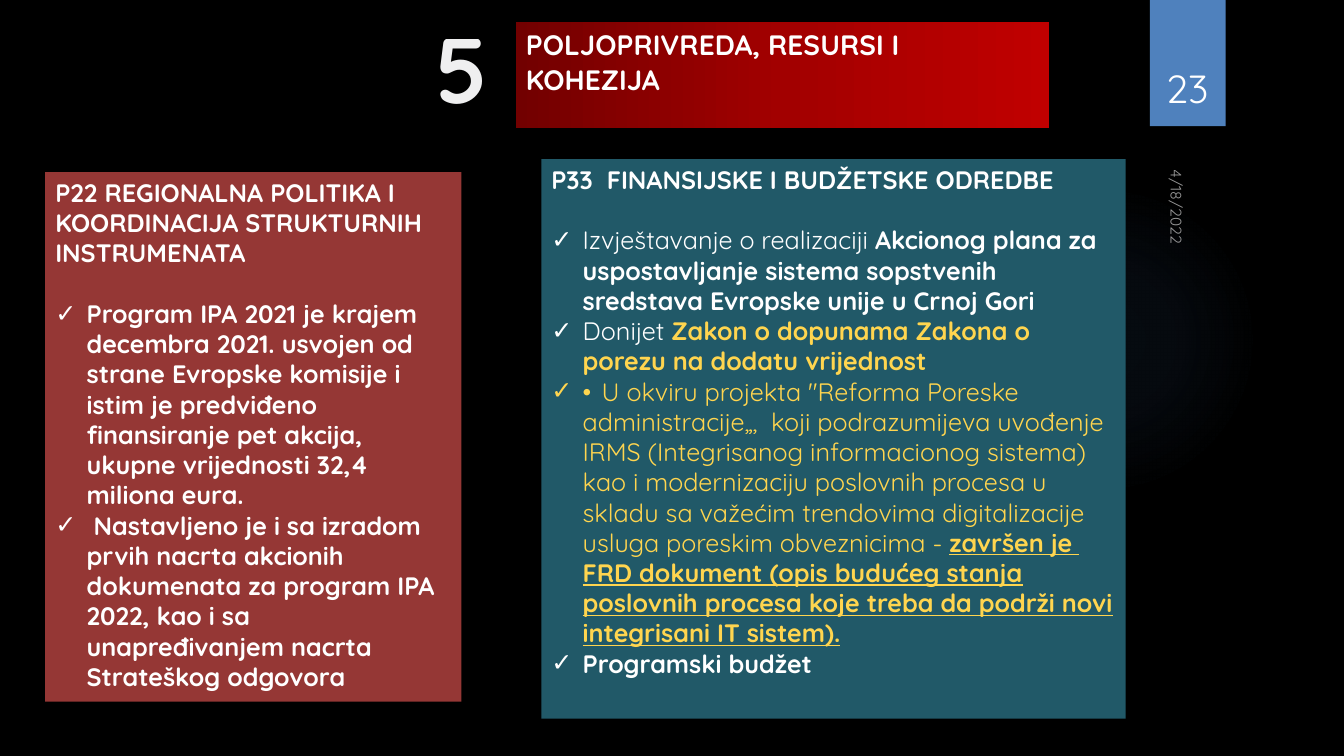
from dataclasses import dataclass

from lxml import etree
from pptx import Presentation
from pptx import util as u
from pptx.dml.color import RGBColor
from pptx.enum import shapes, text
from pptx.oxml import ns


@dataclass(frozen=True)
class Theme:
    font: str = "Quicksand"
    background: str = "000000"
    white: str = "FFFFFF"
    numeral: str = "FCFCFD"
    yellow: str = "FFD54F"
    tab: str = "4F81BD"
    glow: str = "558ED5"
    red: str = "953735"
    teal: str = "215968"
    banner: tuple = ("720000", "A20000", "C00000")
    date_size: float = 11
    body_size: float = 18
    banner_size: float = 20
    page_size: float = 28
    numeral_size: float = 66


THEME = Theme()
SLIDE_SIZE = (33.87, 19.05)
INDENT = 0.79
HEADING_GAP = 21.6
NO_GRID_STYLE = "{2D5ABB26-0587-4C30-8999-92F81FD0307C}"

CHAPTER = ("5", (10.72, 0.15, 1.85, 3.07))
BANNER = ("POLJOPRIVREDA, RESURSI I KOHEZIJA", (13, 0.56, 13.44, 2.67))
PAGE_NUMBER = ("23", (28.75, 0.81, 2.34, 2.13))
DATE = ("4/18/2022", (28.22, 4.98, 2.74, 0.84))
TAB_AREA = (28.98, 0, 1.91, 3.18)
GLOW_AREA = (23.9, 4.65, 7.82, 7.82)

BOLD = {"bold": True}
PLAIN = {"bold": False}
YELLOW = {"color": THEME.yellow}

PANELS = [
    {
        "area": (1.14, 4.34, 10.49, 13.34),
        "fill": THEME.red,
        "heading": "P22 REGIONALNA POLITIKA I KOORDINACIJA STRUKTURNIH INSTRUMENATA",
        "points": [
            [("Program IPA 2021 je krajem decembra 2021. usvojen od strane Evropske komisije i "
              "istim je predviđeno finansiranje pet akcija, ukupne vrijednosti 32,4 miliona eura.", BOLD)],
            [(" Nastavljeno je i sa izradom prvih nacrta akcionih dokumenata za program IPA 2022, "
              "kao i sa unapređivanjem nacrta Strateškog odgovora", BOLD)],
        ],
    },
    {
        "area": (13.64, 4.01, 14.73, 14.1),
        "fill": THEME.teal,
        "heading": "P33  FINANSIJSKE I BUDŽETSKE ODREDBE",
        "points": [
            [("Izvještavanje o realizaciji ", PLAIN),
             ("Akcionog plana za uspostavljanje sistema sopstvenih sredstava "
              "Evropske unije u Crnoj Gori", BOLD)],
            [("Donijet ", PLAIN),
             ("Zakon o dopunama Zakona o porezu na dodatu vrijednost", BOLD | YELLOW)],
            [("•\tU okviru projekta \"Reforma Poreske administracije„,  koji podrazumijeva uvođenje "
              "IRMS (Integrisanog informacionog sistema) kao i modernizaciju poslovnih procesa u "
              "skladu sa važećim trendovima digitalizacije usluga poreskim obveznicima - ", PLAIN | YELLOW),
             ("završen je  FRD dokument (opis budućeg stanja poslovnih procesa koje treba da podrži "
              "novi integrisani IT sistem).", BOLD | YELLOW | {"underline": True})],
            [("Programski budžet", BOLD)],
        ],
    },
]


def place(shape, area):
    shape.left, shape.top, shape.width, shape.height = map(u.Cm, area)


def add_child(parent, tag, **attributes):
    child = etree.SubElement(parent, ns.qn(tag))
    for name, value in attributes.items():
        child.set(name, str(value))
    return child


def write(para, words, size=THEME.body_size, color=THEME.white, bold=False,
          underline=False, opacity=100, spacing=0):
    span = para.add_run()
    span.text = words
    span.font.name = THEME.font
    span.font.size = u.Pt(size)
    span.font.bold = bold
    span.font.underline = underline
    span.font.color.rgb = RGBColor.from_string(color)
    properties = span.font._element
    if opacity < 100:
        tone = properties.find(ns.qn("a:solidFill"))[0]
        add_child(tone, "a:alpha", val=opacity * 1000)
    if spacing:
        properties.set("spc", str(int(spacing * 100)))


def set_bullet(para, symbol=None):
    properties = para._p.get_or_add_pPr()
    indent = u.Cm(INDENT) if symbol else 0
    properties.set("marL", str(indent))
    properties.set("indent", str(-indent))
    if symbol:
        add_child(properties, "a:buChar", char=symbol)
    else:
        add_child(properties, "a:buNone")
    para.space_before = u.Pt(0)


def set_gradient(fill, parent, stops, circular=False):
    fill.background()
    empty = parent.find(ns.qn("a:noFill"))
    gradient = etree.Element(ns.qn("a:gradFill"), rotWithShape="1")
    listing = add_child(gradient, "a:gsLst")
    for position, color, opacity in stops:
        stop = add_child(listing, "a:gs", pos=position * 1000)
        tone = add_child(stop, "a:srgbClr", val=color)
        if opacity < 100:
            add_child(tone, "a:alpha", val=opacity * 1000)
    if circular:
        center = add_child(gradient, "a:path", path="circle")
        add_child(center, "a:fillToRect", l=50000, t=50000, r=50000, b=50000)
    else:
        add_child(gradient, "a:lin", ang=0, scaled=0)
    parent.replace(empty, gradient)


def add_decoration(page, kind, area):
    shape = page.shapes.add_shape(kind, *map(u.Cm, area))
    shape.shadow.inherit = False
    shape.line.fill.background()
    return shape


def add_label(page, content, anchor=text.MSO_ANCHOR.TOP, align=text.PP_ALIGN.LEFT, **style):
    words, area = content
    box = page.shapes.add_textbox(*map(u.Cm, area))
    box.text_frame.word_wrap = True
    box.text_frame.vertical_anchor = anchor
    para = box.text_frame.paragraphs[0]
    para.alignment = align
    write(para, words, **style)
    return box


def fill_panel(box, panel):
    place(box, panel["area"])
    box.fill.solid()
    box.fill.fore_color.rgb = RGBColor.from_string(panel["fill"])
    frame = box.text_frame
    frame.auto_size = text.MSO_AUTO_SIZE.NONE
    heading = frame.paragraphs[0]
    set_bullet(heading)
    heading.space_after = u.Pt(HEADING_GAP)
    write(heading, panel["heading"], bold=True)
    for point in panel["points"]:
        para = frame.add_paragraph()
        set_bullet(para, "✓")
        for words, style in point:
            write(para, words, **style)


def add_banner(page):
    words, area = BANNER
    table = page.shapes.add_table(1, 1, *map(u.Cm, area)).table
    table.first_row = table.horz_banding = False
    table._tbl.tblPr.find(ns.qn("a:tableStyleId")).text = NO_GRID_STYLE
    cell = table.cell(0, 0)
    stops = [(50 * step, color, 100) for step, color in enumerate(THEME.banner)]
    set_gradient(cell.fill, cell._tc.get_or_add_tcPr(), stops)
    write(cell.text_frame.paragraphs[0], words, size=THEME.banner_size, bold=True)


def main():
    """Build the chapter slide and save it."""
    deck = Presentation()
    deck.slide_width, deck.slide_height = map(u.Cm, SLIDE_SIZE)
    page = deck.slides.add_slide(deck.slide_layouts.get_by_name("Two Content"))
    page.background.fill.solid()
    page.background.fill.fore_color.rgb = RGBColor.from_string(THEME.background)
    title, *bodies = page.placeholders

    glow = add_decoration(page, shapes.MSO_SHAPE.OVAL, GLOW_AREA)
    stops = [(0, THEME.glow, 7), (36, THEME.glow, 6), (69, THEME.glow, 0), (100, THEME.glow, 0)]
    set_gradient(glow.fill, glow._element.spPr, stops, circular=True)
    title._element.addprevious(glow._element)

    tab = add_decoration(page, shapes.MSO_SHAPE.RECTANGLE, TAB_AREA)
    tab.fill.solid()
    tab.fill.fore_color.rgb = RGBColor.from_string(THEME.tab)
    add_label(page, PAGE_NUMBER, anchor=text.MSO_ANCHOR.BOTTOM,
              align=text.PP_ALIGN.CENTER, size=THEME.page_size)
    add_label(page, DATE, size=THEME.date_size, opacity=60).rotation = 90

    words, area = CHAPTER
    place(title, area)
    title.text_frame.word_wrap = False
    title.text_frame.auto_size = text.MSO_AUTO_SIZE.NONE
    write(title.text_frame.paragraphs[0], words, size=THEME.numeral_size,
          color=THEME.numeral, bold=True, opacity=95, spacing=0.5)
    add_banner(page)
    for box, panel in zip(bodies, PANELS):
        fill_panel(box, panel)
    deck.save("out.pptx")


if __name__ == "__main__":
    main()
